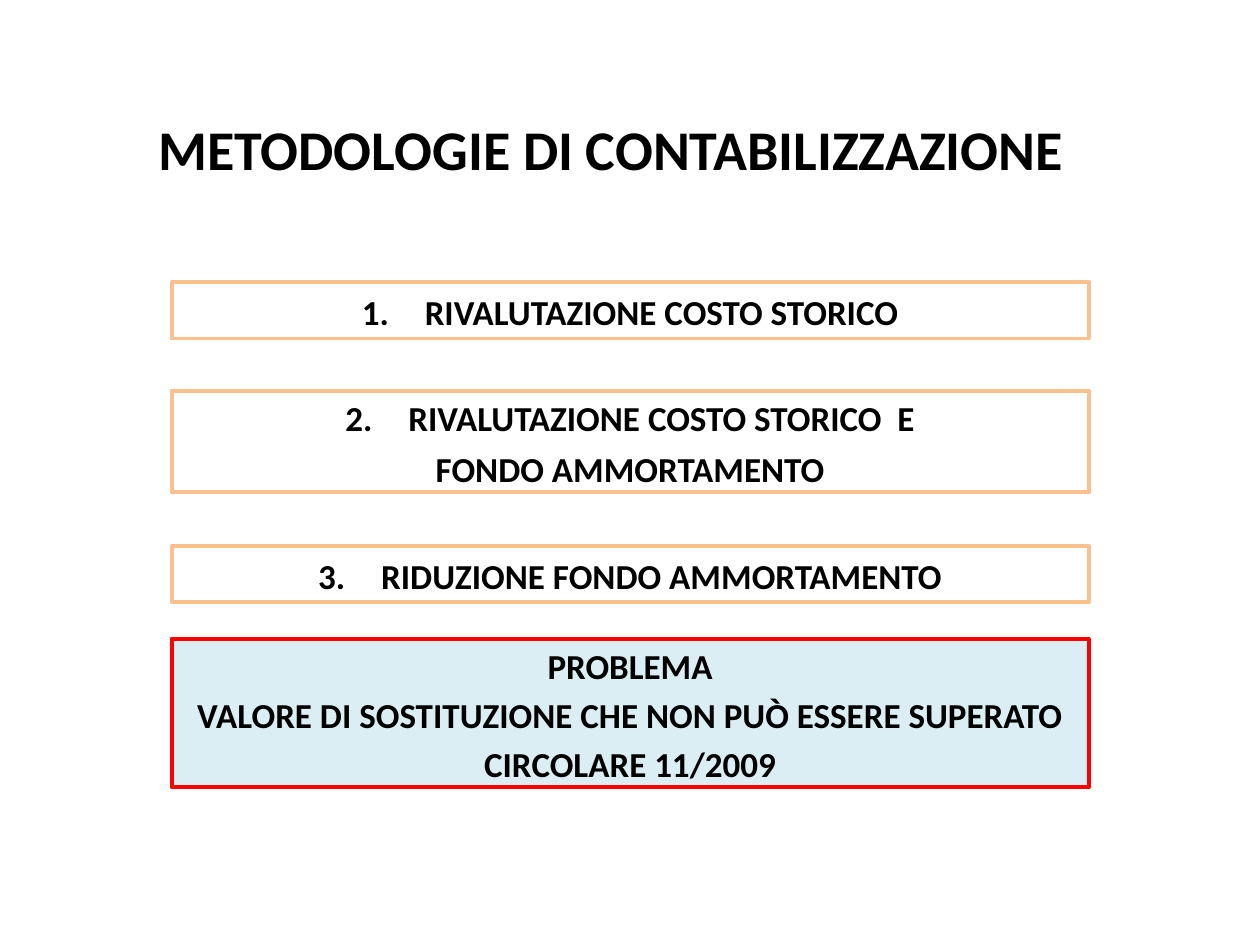
from lxml import etree
from pptx import Presentation
from pptx.dml.color import RGBColor
from pptx.enum import shapes, text
from pptx.oxml import ns
from pptx.util import Pt

BOX_LEFT, BOX_WIDTH = 98.1, 524
METHODS = [  # top, height, lines
    (161.3, 32.2, ["RIVALUTAZIONE COSTO STORICO"]),
    (223.2, 58.2, ["RIVALUTAZIONE COSTO STORICO  E", "FONDO AMMORTAMENTO"]),
    (311.8, 32.2, ["RIDUZIONE FONDO AMMORTAMENTO"]),
]
PROBLEM = [
    "PROBLEMA",
    "VALORE DI SOSTITUZIONE CHE NON PUÒ ESSERE SUPERATO",
    "CIRCOLARE 11/2009",
]


def color(hex_string):
    return RGBColor.from_string(hex_string)


def format_paragraph(paragraph, size):
    paragraph.alignment = text.PP_ALIGN.CENTER
    for run in paragraph.runs:
        run.font.name = "Calibri"
        run.font.size = Pt(size)
        run.font.bold = True
        run.font.color.rgb = color("000000")


def number_paragraph(paragraph, number):
    properties = paragraph._p.get_or_add_pPr()
    properties.set("marL", str(Pt(36)))
    properties.set("indent", str(Pt(-36)))
    bullet = etree.SubElement(properties, ns.qn("a:buAutoNum"))
    bullet.set("type", "arabicPeriod")
    bullet.set("startAt", str(number))


def add_title(slide, left, top, width, height):
    title = slide.shapes.title
    title.left, title.top = Pt(left), Pt(top)
    title.width, title.height = Pt(width), Pt(height)
    title.text_frame.text = "METODOLOGIE DI CONTABILIZZAZIONE"
    title.text_frame.vertical_anchor = text.MSO_ANCHOR.MIDDLE
    format_paragraph(title.text_frame.paragraphs[0], 32)


def add_box(slide, left, top, width, height, lines, fill, line, anchor):
    shape = slide.shapes.add_shape(
        shapes.MSO_SHAPE.RECTANGLE, Pt(left), Pt(top), Pt(width), Pt(height))
    shape.shadow.inherit = False
    shape.fill.solid()
    shape.fill.fore_color.rgb = color(fill)
    shape.line.color.rgb = color(line)
    shape.line.width = Pt(2.25)
    frame = shape.text_frame
    frame.word_wrap = True
    frame.vertical_anchor = anchor
    frame.text = "\n".join(lines)
    for index, paragraph in enumerate(frame.paragraphs):
        format_paragraph(paragraph, 20)
        if index:
            paragraph.space_before = Pt(4)
    return shape


def add_method(slide, left, top, width, height, number, lines):
    shape = add_box(slide, left, top, width, height, lines,
                    "FFFFFF", "FAC090", text.MSO_ANCHOR.MIDDLE)
    paragraphs = shape.text_frame.paragraphs
    for paragraph in paragraphs:
        paragraph.line_spacing = 1.07
    number_paragraph(paragraphs[0], number)


def main():
    presentation = Presentation()
    presentation.slide_width, presentation.slide_height = Pt(720), Pt(540)
    slide = presentation.slides.add_slide(presentation.slide_layouts[5])

    # Title
    add_title(slide, -10.8, 63, 720, 43.2)

    # Numbered methods
    for number, (top, height, lines) in enumerate(METHODS, 1):
        add_method(slide, BOX_LEFT, top, BOX_WIDTH, height, number, lines)

    # Problem
    add_box(slide, BOX_LEFT, 365, BOX_WIDTH, 85, PROBLEM,
            "DBEEF4", "FF0000", text.MSO_ANCHOR.TOP)

    presentation.save("out.pptx")


if __name__ == "__main__":
    main()
